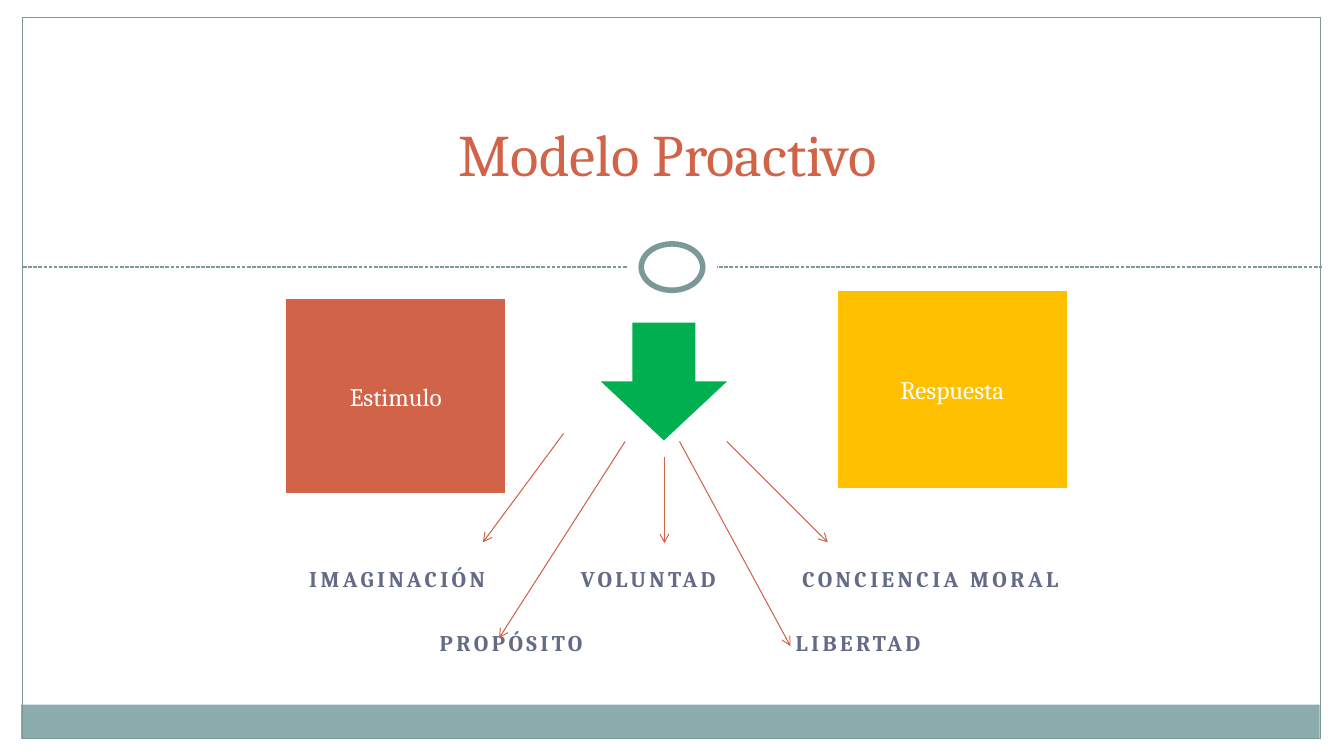
import pptx
import pptx.util
import pptx.dml.color
import pptx.enum.dml
import pptx.enum.shapes
import pptx.enum.text
import pptx.oxml.ns
import lxml.etree

PX = 9144
FONT = "Cambria"
TEAL, RUST, WHITE, SLATE = "7C999A", "D16349", "FFFFFF", "646B86"
SHAPE = pptx.enum.shapes.MSO_SHAPE
ANCHOR = pptx.enum.text.MSO_ANCHOR

SLIDE_SIZE = (1333, 750)
FOOTER_BAND = (21, 699, 1288, 34)
FRAME = (22, 17, 1288, 716)
DIVIDER = (23, 265, 1311, 265)
RING_GAP = (622, 231, 89, 67)
RING = (636, 242, 61, 46)
TITLE = ("Modelo Proactivo", (237, 0, 850, 192))
BOXES = [
    ("Estimulo", (284, 297, 217, 192), RUST),
    ("Respuesta", (831, 289, 227, 195), "FFC000"),
]
DOWN_ARROW = (596, 320, 125, 117)
LABEL_SIZE = (300, 40)
LABELS = [
    ("IMAGINACIÓN", 394, 574),
    ("VOLUNTAD", 643, 574),
    ("CONCIENCIA MORAL", 923, 574),
    ("PROPÓSITO", 507, 637),
    ("LIBERTAD", 851, 637),
]
ARROWS = [
    (721, 438, 821, 538),
    (559, 430, 479, 538),
    (659, 453, 659, 539),
    (674, 438, 784, 641),
    (620, 438, 495, 633),
]


def emu(lengths):
    return [n * PX for n in lengths]


def rgb(color):
    return pptx.dml.color.RGBColor.from_string(color)


def add_shape(s, kind, at, fill=None, line=None, width=0.75):
    sp = s.shapes.add_shape(kind, *emu(at))
    sp.shadow.inherit = False
    if fill:
        sp.fill.solid()
        sp.fill.fore_color.rgb = rgb(fill)
    else:
        sp.fill.background()
    if line:
        sp.line.color.rgb = rgb(line)
        sp.line.width = pptx.util.Pt(width)
    else:
        sp.line.fill.background()
    return sp


def write(sp, text, size, color, anchor=ANCHOR.MIDDLE):
    tf = sp.text_frame
    tf.word_wrap = True
    tf.vertical_anchor = anchor
    p = tf.paragraphs[0]
    p.alignment = pptx.enum.text.PP_ALIGN.CENTER
    r = p.add_run()
    r.text = text
    r.font.name = FONT
    r.font.size = pptx.util.Pt(size)
    r.font.color.rgb = rgb(color)
    return r


def add_line(s, ends, color, width):
    cn = s.shapes.add_connector(pptx.enum.shapes.MSO_CONNECTOR.STRAIGHT, *emu(ends))
    cn.line.color.rgb = rgb(color)
    cn.line.width = pptx.util.Pt(width)
    lxml.etree.SubElement(cn._element.spPr, pptx.oxml.ns.qn("a:effectLst"))
    return cn


def main():
    prs = pptx.Presentation()
    prs.slide_width, prs.slide_height = emu(SLIDE_SIZE)
    s = prs.slides.add_slide(prs.slide_layouts[6])

    add_shape(s, SHAPE.RECTANGLE, FOOTER_BAND, "8CADAE")
    divider = add_line(s, DIVIDER, TEAL, 0.9)
    divider.line.dash_style = pptx.enum.dml.MSO_LINE.SQUARE_DOT
    add_shape(s, SHAPE.RECTANGLE, FRAME, line=TEAL)
    add_shape(s, SHAPE.OVAL, RING_GAP, WHITE)
    add_shape(s, SHAPE.OVAL, RING, WHITE, TEAL, 4)

    for text, at, fill in BOXES:
        write(add_shape(s, SHAPE.FLOWCHART_PROCESS, at, fill), text, 18, WHITE)

    w, h = LABEL_SIZE
    for text, cx, cy in LABELS:
        sp = s.shapes.add_textbox(*emu((cx - w // 2, cy - h // 2, w, h)))
        r = write(sp, text, 16, SLATE)
        r.font.bold = True
        r._r.get_or_add_rPr().set("spc", "250")

    text, at = TITLE
    write(s.shapes.add_textbox(*emu(at)), text, 42, RUST, ANCHOR.BOTTOM)

    add_shape(s, SHAPE.DOWN_ARROW, DOWN_ARROW, "00B050")
    for ends in ARROWS:
        cn = add_line(s, ends, RUST, 0.75)
        ln = cn.line._get_or_add_ln()
        lxml.etree.SubElement(ln, pptx.oxml.ns.qn("a:tailEnd"), type="arrow")

    prs.save("out.pptx")


if __name__ == "__main__":
    main()
